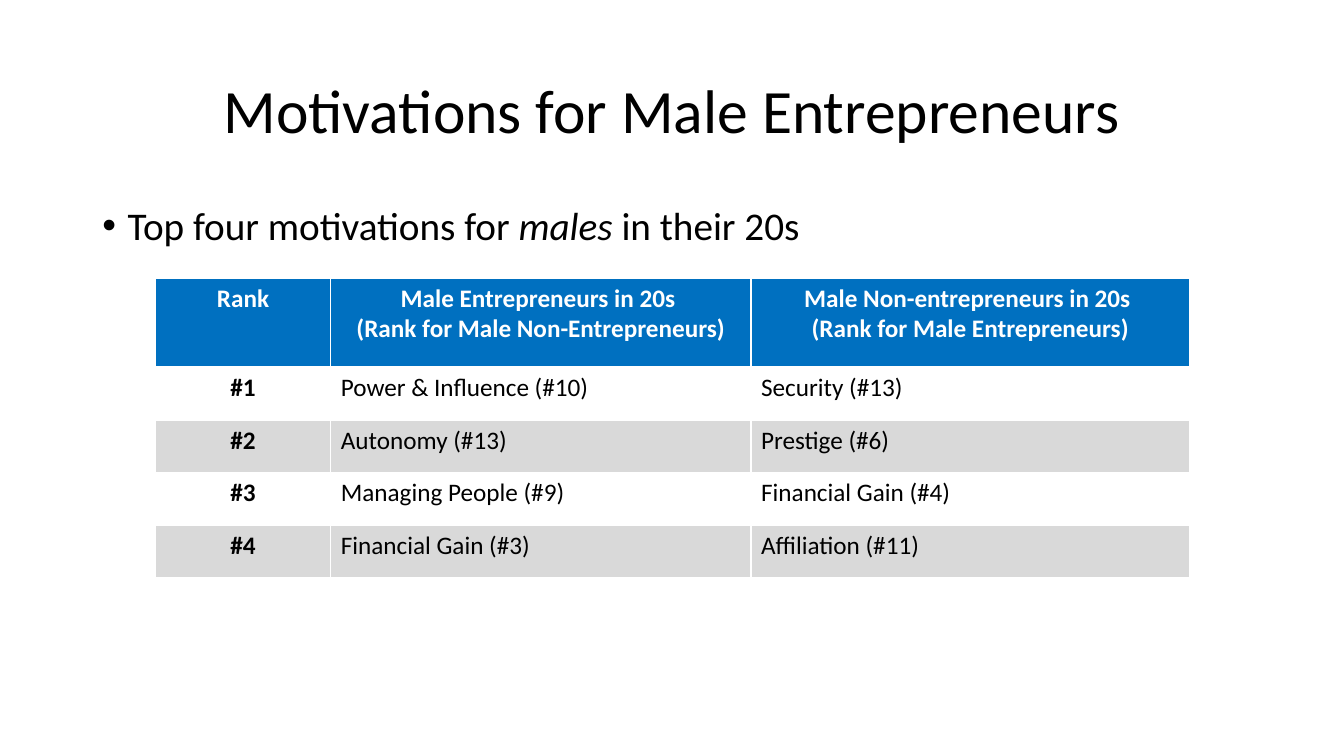
import pptx
import pptx.util
import pptx.dml.color
import pptx.enum.text
import pptx.oxml
import pptx.oxml.ns

Pt = pptx.util.Pt
RGBColor = pptx.dml.color.RGBColor
PP_ALIGN = pptx.enum.text.PP_ALIGN
MSO_ANCHOR = pptx.enum.text.MSO_ANCHOR

BLACK = RGBColor(0x00, 0x00, 0x00)
WHITE = RGBColor(0xFF, 0xFF, 0xFF)
BLUE = RGBColor(0x00, 0x70, 0xC0)
GREY = RGBColor(0xD9, 0xD9, 0xD9)
FONT = "Calibri"

HEADINGS = [
    "Rank",
    "Male Entrepreneurs in 20s \n(Rank for Male Non-Entrepreneurs)",
    "Male Non-entrepreneurs in 20s \v(Rank for Male Entrepreneurs)",
]
MOTIVATIONS = [
    ("Power & Influence (#10)", "Security (#13)"),
    ("Autonomy (#13)", "Prestige (#6)"),
    ("Managing People (#9)", "Financial Gain (#4)"),
    ("Financial Gain (#3)", "Affiliation (#11)"),
]
COLUMN_WIDTHS = [125.28, 300.24, 313.2]
HEADING_HEIGHT = 64.08
RANK_HEIGHT = 37.44


def write(paragraph, text, size=18, color=BLACK, bold=False, italic=False, align=None):
    if align is not None:
        paragraph.alignment = align
    for index, line in enumerate(text.split("\v")):
        if index:
            paragraph.add_line_break()
        run = paragraph.add_run()
        run.text = line
        run.font.name = FONT
        run.font.size = Pt(size)
        run.font.bold = bold
        run.font.italic = italic
        run.font.color.rgb = color


def set_borders(cell, bottom_width):
    properties = cell._tc.get_or_add_tcPr()
    widths = {"lnL": 1, "lnR": 1, "lnT": 1, "lnB": bottom_width}
    for index, (side, width) in enumerate(widths.items()):
        border = pptx.oxml.parse_xml(
            f'<a:{side} {pptx.oxml.ns.nsdecls("a")} w="{Pt(width)}">'
            f'<a:solidFill><a:srgbClr val="{WHITE}"/></a:solidFill></a:{side}>'
        )
        properties.insert(index, border)


def fill_cell(cell, text, fill, bottom_width=1, **text_format):
    cell.fill.solid()
    cell.fill.fore_color.rgb = fill
    set_borders(cell, bottom_width)
    for index, line in enumerate(text.split("\n")):
        frame = cell.text_frame
        paragraph = frame.add_paragraph() if index else frame.paragraphs[0]
        write(paragraph, line, **text_format)


def place_title(slide, left, top, width, height):
    title = slide.shapes.title
    title.left, title.top = Pt(left), Pt(top)
    title.width, title.height = Pt(width), Pt(height)
    frame = title.text_frame
    frame.auto_size = pptx.enum.text.MSO_AUTO_SIZE.NONE
    frame.vertical_anchor = MSO_ANCHOR.MIDDLE
    heading = frame.paragraphs[0]
    heading.line_spacing = 0.9
    write(heading, "Motivations for Male Entrepreneurs", size=44, align=PP_ALIGN.CENTER)


def place_ranking(slide, left, top):
    height = HEADING_HEIGHT + RANK_HEIGHT * len(MOTIVATIONS)
    ranking = slide.shapes.add_table(
        len(MOTIVATIONS) + 1, len(HEADINGS),
        Pt(left), Pt(top), Pt(sum(COLUMN_WIDTHS)), Pt(height),
    ).table
    for column, width in zip(ranking.columns, COLUMN_WIDTHS):
        column.width = Pt(width)
    for index, row in enumerate(ranking.rows):
        row.height = Pt(RANK_HEIGHT if index else HEADING_HEIGHT)
    for column, heading in enumerate(HEADINGS):
        fill_cell(ranking.cell(0, column), heading, BLUE, bottom_width=3,
                  color=WHITE, bold=True, align=PP_ALIGN.CENTER)
    for rank, motivations in enumerate(MOTIVATIONS, start=1):
        fill = WHITE if rank % 2 else GREY
        fill_cell(ranking.cell(rank, 0), f"#{rank}", fill,
                  bold=True, align=PP_ALIGN.CENTER)
        for column, motivation in enumerate(motivations, start=1):
            fill_cell(ranking.cell(rank, column), motivation, fill)


def place_summary(slide, left, top, width, height):
    summary = slide.shapes.add_textbox(Pt(left), Pt(top), Pt(width), Pt(height))
    frame = summary.text_frame
    frame.word_wrap = True
    point = frame.paragraphs[0]
    point.line_spacing = 0.9
    point.space_before = Pt(10)
    properties = point._p.get_or_add_pPr()
    properties.set("marL", str(Pt(18)))
    properties.set("indent", str(-Pt(18)))
    for bullet in ('<a:buFont {} typeface="Arial"/>', '<a:buChar {} char="•"/>'):
        properties.append(pptx.oxml.parse_xml(bullet.format(pptx.oxml.ns.nsdecls("a"))))
    write(point, "Top four motivations for ", size=28)
    write(point, "males ", size=28, italic=True)
    write(point, "in their 20s", size=28)


def main():
    presentation = pptx.Presentation()
    presentation.slide_width = Pt(960)
    presentation.slide_height = Pt(540)
    slide = presentation.slides.add_slide(presentation.slide_layouts[5])
    place_title(slide, 66, 28.75, 828, 104.4)
    place_ranking(slide, 111, 198.72)
    place_summary(slide, 66, 143.75, 855.36, 380.88)
    presentation.save("out.pptx")


if __name__ == "__main__":
    main()
